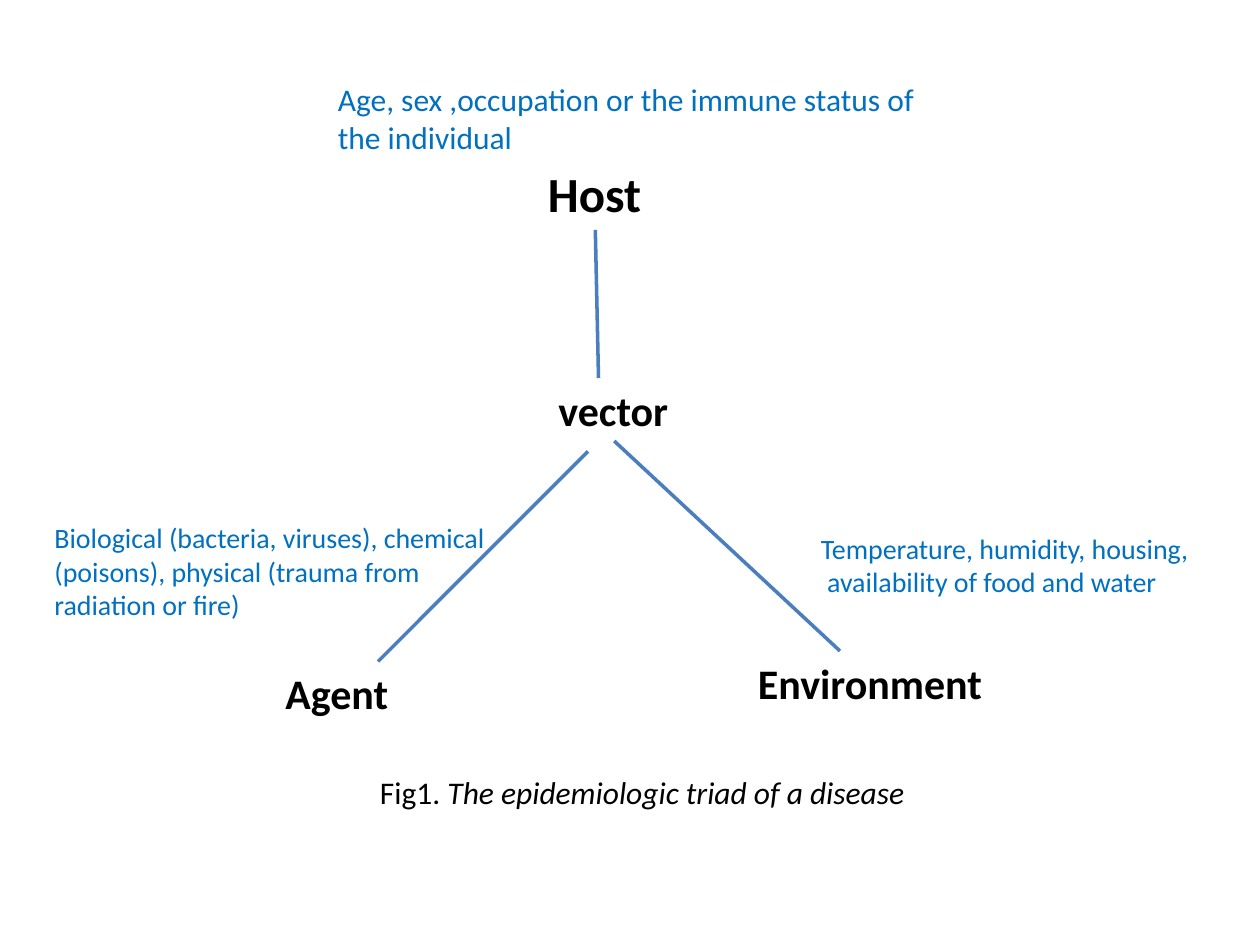
import dataclasses

import pptx
import pptx.dml.color
import pptx.enum.shapes
import pptx.enum.text
import pptx.oxml.ns
import pptx.util
from lxml import etree

COLUMNS, ROWS = 120, 90
SLIDE_WIDTH, SLIDE_HEIGHT = pptx.util.Inches(10), pptx.util.Inches(7.5)


@dataclasses.dataclass(frozen=True)
class Theme:
    font: str = "Calibri"
    ink: str = "000000"
    detail: str = "0070C0"
    link: str = "4B7EBC"
    link_width: float = 2
    host_size: int = 28
    factor_size: int = 24
    body_size: int = 18
    detail_size: int = 16


THEME = Theme()


def x(column):
    return round(SLIDE_WIDTH * column / COLUMNS)


def y(row):
    return round(SLIDE_HEIGHT * row / ROWS)


def rgb(code):
    return pptx.dml.color.RGBColor.from_string(code)


def add_text(slide, area, *paragraphs, size, color=THEME.ink, bold=None, wrap=False):
    """Place paragraphs, each a list of (text, italic) runs or a plain string.

    The area is column, row, columns wide, rows high.
    """
    column, row, columns, rows = area
    label = slide.shapes.add_textbox(x(column), y(row), x(columns), y(rows))
    frame = label.text_frame
    frame.word_wrap = wrap
    frame.auto_size = pptx.enum.text.MSO_AUTO_SIZE.SHAPE_TO_FIT_TEXT
    for index, content in enumerate(paragraphs):
        paragraph = frame.add_paragraph() if index else frame.paragraphs[0]
        runs = [(content, None)] if isinstance(content, str) else content
        for wording, italic in runs:
            run = paragraph.add_run()
            run.text = wording
            run.font.name = THEME.font
            run.font.size = pptx.util.Pt(size)
            run.font.color.rgb = rgb(color)
            run.font.bold = bold
            run.font.italic = italic
    return label


def add_factor(slide, area, name, size=THEME.factor_size):
    return add_text(slide, area, name, size=size, bold=True)


def add_detail(slide, area, *lines, size=THEME.detail_size):
    return add_text(slide, area, *lines, size=size, color=THEME.detail, wrap=True)


def add_link(slide, start, end, source=None):
    """Draw a line between grid points, joined to the bottom of source if given."""
    link = slide.shapes.add_connector(
        pptx.enum.shapes.MSO_CONNECTOR.STRAIGHT,
        x(start[0]), y(start[1]), x(end[0]), y(end[1]),
    )
    if source is not None:
        link.begin_connect(source, 2)
    link.line.color.rgb = rgb(THEME.link)
    link.line.width = pptx.util.Pt(THEME.link_width)
    etree.SubElement(link._element.spPr, pptx.oxml.ns.qn("a:effectLst"))


def main():
    deck = pptx.Presentation()
    deck.slide_width, deck.slide_height = SLIDE_WIDTH, SLIDE_HEIGHT
    slide = deck.slides.add_slide(deck.slide_layouts[6])

    host = add_factor(slide, (51, 15, 11.4, 6.9), "Host", size=THEME.host_size)
    add_factor(slide, (26, 63, 12.4, 6), "Agent")
    add_factor(slide, (71, 62, 24, 6), "Environment")
    vector = add_factor(slide, (52, 36, 13, 6), "vector")

    add_link(slide, (56.7, 21.9), (57, 36), source=host)
    add_link(slide, (58.5, 42), (80, 62), source=vector)
    add_link(slide, (56, 43), (36, 63))

    add_text(
        slide, (35, 73, 53.6, 8.5),
        [("Fig1.", None), (" The epidemiologic triad of a disease", True)],
        size=THEME.body_size,
    )
    add_detail(
        slide, (31, 7, 60, 8.5),
        "Age, sex ,occupation or the immune status of the individual",
        size=THEME.body_size,
    )
    add_detail(
        slide, (4, 49, 46, 10.9),
        "Biological (bacteria, viruses), chemical (poisons), "
        "physical (trauma from radiation or fire)",
    )
    add_detail(
        slide, (77, 50, 43, 7.7),
        "Temperature, humidity, housing,",
        " availability of food and water",
    )

    deck.save("out.pptx")


if __name__ == "__main__":
    main()
